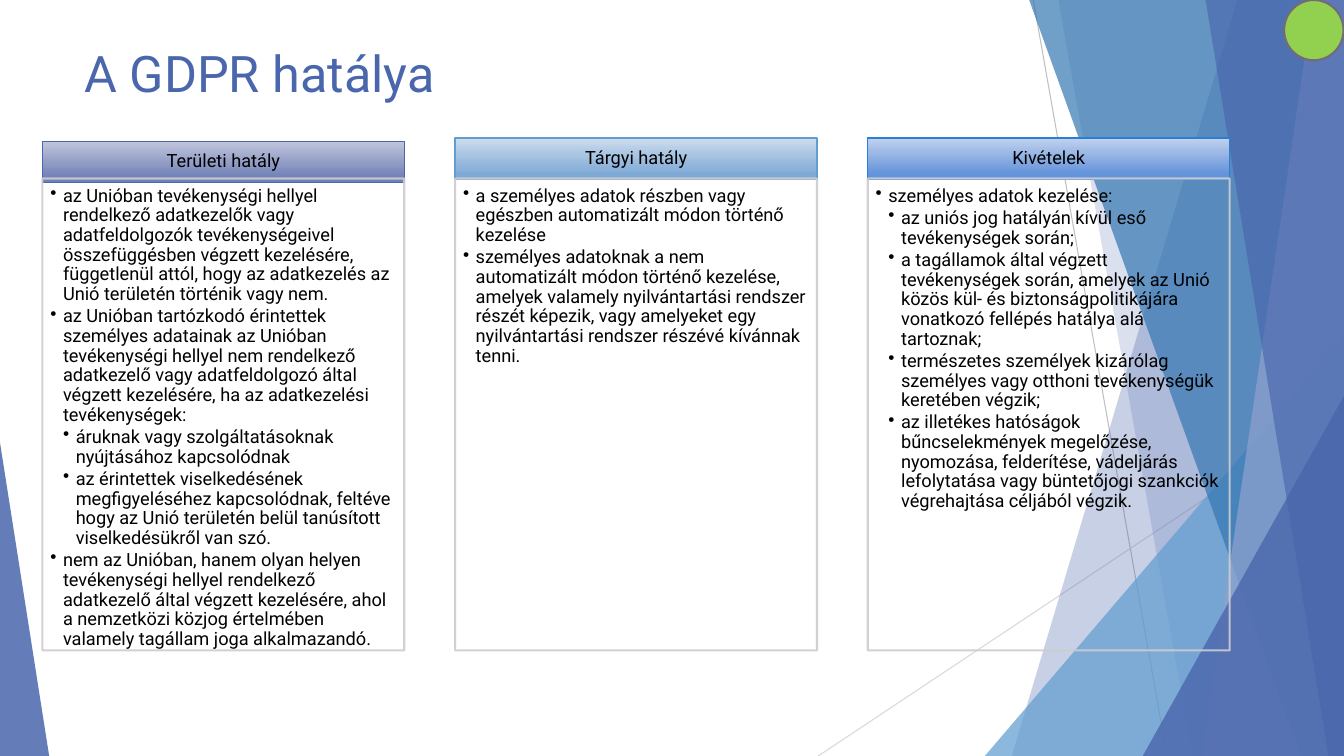
from dataclasses import dataclass

from lxml import etree
from pptx import Presentation, util as u
from pptx.dml.color import RGBColor
from pptx.enum import shapes, text
from pptx.oxml.ns import qn

WIDE, HIGH, TOP = 33.87, 19.05, -0.02
FONT = "Roboto"
BLUE, BLACK = "4A66AC", "000000"


@dataclass
class Facet:
    """A band along the right edge, with its left side from top to foot."""
    top: float
    foot: float
    hue: str
    alpha: int


@dataclass
class Wedge:
    """A triangle on the slide's lower edge."""
    left: float
    top: float
    width: float
    tip: int
    hue: str
    alpha: int


@dataclass
class Column:
    title: str
    top: float
    light: str
    dark: str
    edge: str
    items: list[tuple[int, str]]


RAYS = [((26.04, 0), (29.41, HIGH), "BFBFBF"),
        ((WIDE, 10.24), (20.62, HIGH), "D9D9D9")]

DECOR = [
    Facet(31.19, 25.5, BLUE, 30),
    Facet(26.67, 30.05, BLUE, 20),
    Wedge(24.82, 8.46, 9.05, 1, "629DD1", 72),
    Facet(25.93, 32.79, "3477B2", 70),
    Facet(33.1, 30.28, "90A2CF", 70),
    Facet(30.38, 33.48, BLUE, 65),
    Wedge(28.8, 9.98, 5.07, 1, BLUE, 80),
    Wedge(0, 11.15, 1.24, 0, BLUE, 85),
]

COLUMNS = [
    Column("Területi hatály", 3.56, "C1C6DC", "7181B7", BLUE, [
        (0, "az Unióban tevékenységi hellyel rendelkező adatkezelők vagy adatfeldolgozók "
            "tevékenységeivel összefüggésben végzett kezelésére, függetlenül attól, hogy az "
            "adatkezelés az Unió területén történik vagy nem."),
        (0, "az Unióban tartózkodó érintettek személyes adatainak az Unióban tevékenységi "
            "hellyel nem rendelkező adatkezelő vagy adatfeldolgozó által végzett kezelésére, "
            "ha az adatkezelési tevékenységek:"),
        (1, "áruknak vagy szolgáltatásoknak nyújtásához kapcsolódnak"),
        (1, "az érintettek viselkedésének megfigyeléséhez kapcsolódnak, feltéve hogy az Unió "
            "területén belül tanúsított viselkedésükről van szó."),
        (0, "nem az Unióban, hanem olyan helyen tevékenységi hellyel rendelkező adatkezelő "
            "által végzett kezelésére, ahol a nemzetközi közjog értelmében valamely tagállam "
            "joga alkalmazandó."),
    ]),
    Column("Tárgyi hatály", 3.48, "CDDCED", "7FAAD6", "629DD1", [
        (0, "a személyes adatok részben vagy egészben automatizált módon történő kezelése"),
        (0, "személyes adatoknak a nem automatizált módon történő kezelése, amelyek valamely "
            "nyilvántartási rendszer részét képezik, vagy amelyeket egy nyilvántartási "
            "rendszer részévé kívánnak tenni."),
    ]),
    Column("Kivételek", 3.48, "C2D1EE", "6393DA", "297FD5", [
        (0, "személyes adatok kezelése:"),
        (1, "az uniós jog hatályán kívül eső tevékenységek során;"),
        (1, "a tagállamok által végzett tevékenységek során, amelyek az Unió közös kül- és "
            "biztonságpolitikájára vonatkozó fellépés hatálya alá tartoznak;"),
        (1, "természetes személyek kizárólag személyes vagy otthoni tevékenységük keretében "
            "végzik;"),
        (1, "az illetékes hatóságok bűncselekmények megelőzése, nyomozása, felderítése, "
            "vádeljárás lefolytatása vagy büntetőjogi szankciók végrehajtása céljából végzik."),
    ]),
]


def paint(color, hue: str, alpha: int = 100) -> None:
    color.rgb = RGBColor.from_string(hue)
    if alpha < 100:
        node = color._xFill.find(qn("a:srgbClr"))
        etree.SubElement(node, qn("a:alpha"), val=str(alpha * 1000))


def flood(shape, hue: str, alpha: int = 100) -> None:
    """Give a shape a plain fill with no line and no shadow."""
    shape.shadow.inherit = False
    shape.fill.solid()
    paint(shape.fill.fore_color, hue, alpha)
    shape.line.fill.background()


def outline(shape, hue: str, width: float, alpha: int = 100) -> None:
    shape.shadow.inherit = False
    shape.line.width = u.Pt(width)
    shape.line.fill.solid()
    paint(shape.line.color, hue, alpha)


def place(slide, kind, left: float, top: float, width: float, height: float):
    return slide.shapes.add_shape(kind, u.Cm(left), u.Cm(top), u.Cm(width), u.Cm(height))


def draw_ray(slide, start, end, hue: str) -> None:
    ray = slide.shapes.add_connector(shapes.MSO_CONNECTOR.STRAIGHT,
                                     *(u.Cm(v) for v in (*start, *end)))
    ray.line.width = u.Pt(0.75)
    paint(ray.line.color, hue)
    etree.SubElement(ray._element.spPr, qn("a:effectLst"))


def draw_facet(slide, facet: Facet) -> None:
    pen = slide.shapes.build_freeform(u.Cm(facet.top), u.Cm(TOP))
    ends = [(WIDE, TOP), (WIDE, HIGH), (facet.foot, HIGH)]
    pen.add_line_segments([(u.Cm(x), u.Cm(y)) for x, y in ends], close=True)
    flood(pen.convert_to_shape(), facet.hue, facet.alpha)


def draw_wedge(slide, wedge: Wedge) -> None:
    shape = place(slide, shapes.MSO_SHAPE.ISOSCELES_TRIANGLE,
                  wedge.left, wedge.top, wedge.width, HIGH - wedge.top)
    shape.adjustments[0] = wedge.tip
    flood(shape, wedge.hue, wedge.alpha)


def set_frame(shape, insets, anchor):
    frame = shape.text_frame
    frame.word_wrap = True
    frame.vertical_anchor = anchor
    (frame.margin_left, frame.margin_top,
     frame.margin_right, frame.margin_bottom) = map(u.Cm, insets)
    return frame


def style(para, size: float, hue: str, align=text.PP_ALIGN.LEFT) -> None:
    para.alignment = align
    para.line_spacing = 0.9
    para.font.name = FONT
    para.font.size = u.Pt(size)
    paint(para.font.color, hue)


def add_bullet(para, level: int) -> None:
    para.level = level
    props = para._p.get_or_add_pPr()
    props.set("marL", str(u.Cm(0.32 * (level + 1))))
    props.set("indent", str(u.Cm(-0.32)))
    etree.SubElement(props, qn("a:buChar"), char="•")


def draw_column(slide, left: float, col: Column) -> None:
    head = place(slide, shapes.MSO_SHAPE.RECTANGLE, left, col.top, 9.12, 1.04)
    outline(head, col.edge, 1)
    head.fill.gradient()
    head.fill.gradient_angle = 270
    for stop, hue, spot in zip(head.fill.gradient_stops, (col.light, col.dark), (0, 0.88)):
        paint(stop.color, hue)
        stop.position = spot
    frame = set_frame(head, (0.25, 0.15, 0.25, 0.15), text.MSO_ANCHOR.MIDDLE)
    frame.text = col.title
    style(frame.paragraphs[0], 13, BLACK, text.PP_ALIGN.CENTER)

    body = place(slide, shapes.MSO_SHAPE.RECTANGLE, left, 4.5, 9.12, 11.89)
    body.fill.background()
    outline(body, "CDCDD1", 1.5, 90)
    frame = set_frame(body, (0.2, 0.2, 0.25, 0.28), text.MSO_ANCHOR.TOP)
    frame.text = "\n".join(words for _, words in col.items)
    for para, (level, _) in zip(frame.paragraphs, col.items):
        add_bullet(para, level)
        style(para, 13, BLACK)
        para.space_after = u.Pt(1.8)


def main() -> None:
    deck = Presentation()
    deck.slide_width, deck.slide_height = u.Cm(WIDE), u.Cm(HIGH)
    slide = deck.slides.add_slide(deck.slide_layouts[6])
    for ray in RAYS:
        draw_ray(slide, *ray)
    for part in DECOR:
        if isinstance(part, Facet):
            draw_facet(slide, part)
        else:
            draw_wedge(slide, part)

    title = slide.shapes.add_textbox(u.Cm(1.88), u.Cm(0.86), u.Cm(23.88), u.Cm(2.11))
    frame = set_frame(title, (0.25, 0.13, 0.25, 0.13), text.MSO_ANCHOR.MIDDLE)
    frame.text = "A GDPR hatálya"
    style(frame.paragraphs[0], 36, BLUE)

    dot = place(slide, shapes.MSO_SHAPE.OVAL, 32.36, 0, 1.5, 1.52)
    flood(dot, "92D050")
    outline(dot, "746B76", 1.5)
    for i, col in enumerate(COLUMNS):
        draw_column(slide, 1.07 + 10.4 * i, col)
    deck.save("out.pptx")


if __name__ == "__main__":
    main()
